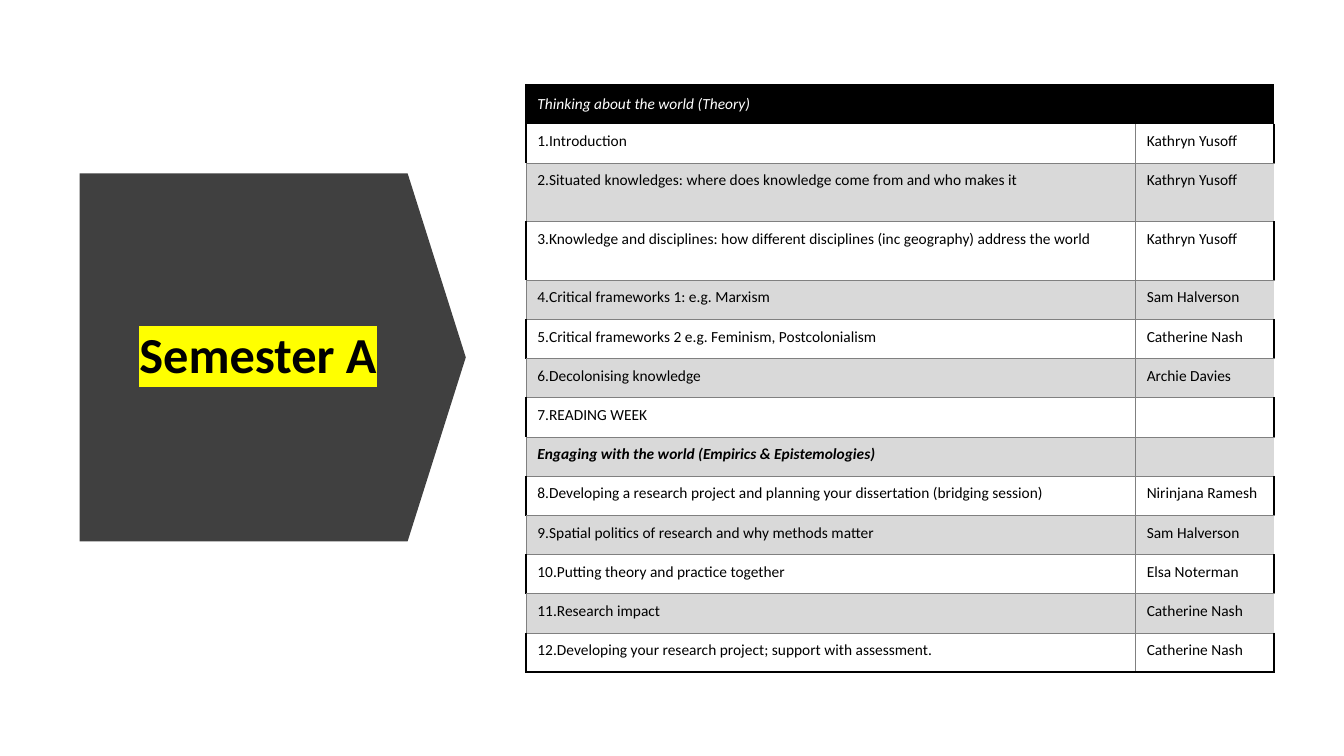
from dataclasses import dataclass
from typing import Optional

from lxml import etree
from pptx import Presentation
from pptx import util as u
from pptx.dml.color import RGBColor
from pptx.enum import shapes, text
from pptx.oxml import ns


@dataclass(frozen=True)
class Theme:
    font: str = "Calibri"
    black: str = "000000"
    white: str = "FFFFFF"
    arrow: str = "404040"
    band: str = "D9D9D9"
    rule: str = "808080"
    highlight: str = "FFFF00"
    title_size: float = 36
    table_size: float = 11
    thick: float = 1.5
    thin: float = 0.5


@dataclass(frozen=True)
class Box:
    """A place in percent of the slide's width and height."""
    left: float
    top: float
    width: float
    height: float


@dataclass(frozen=True)
class Session:
    topic: str
    lecturer: str = ""
    week: Optional[int] = None
    height: float = 5.19


THEME = Theme()
TALL = 7.74
ARROW = Box(6.6, 21.73, 27.38, 51.07)
TITLE = Box(8.4, 28.67, 21.6, 37.2)
TABLE = Box(39.16, 11.2, 55.62, 77.76)
COLUMNS = (45.34, 10.28)
NO_STYLE = "{2D5ABB26-0587-4C30-8999-92F81FD0307C}"

SESSIONS = [
    Session("Thinking about the world (Theory)"),
    Session("Introduction", "Kathryn Yusoff", 1),
    Session("Situated knowledges: where does knowledge come from and who makes it",
            "Kathryn Yusoff", 2, TALL),
    Session("Knowledge and disciplines: how different disciplines (inc geography) address the world",
            "Kathryn Yusoff", 3, TALL),
    Session("Critical frameworks 1: e.g. Marxism", "Sam Halverson", 4),
    Session("Critical frameworks 2 e.g. Feminism, Postcolonialism", "Catherine Nash", 5),
    Session("Decolonising knowledge", "Archie Davies", 6),
    Session("READING WEEK", week=7),
    Session("Engaging with the world (Empirics & Epistemologies)"),
    Session("Developing a research project and planning your dissertation (bridging session)",
            "Nirinjana Ramesh", 8),
    Session("Spatial politics of research and why methods matter", "Sam Halverson", 9),
    Session("Putting theory and practice together", "Elsa Noterman", 10),
    Session("Research impact", "Catherine Nash", 11),
    Session("Developing your research project; support with assessment.", "Catherine Nash", 12),
]

prs = Presentation()
prs.slide_width, prs.slide_height = u.Inches(13.33), u.Inches(7.5)


def across(percent: float) -> int:
    return round(prs.slide_width * percent / 100)


def down(percent: float) -> int:
    return round(prs.slide_height * percent / 100)


def place(box: Box) -> tuple[int, int, int, int]:
    return across(box.left), down(box.top), across(box.width), down(box.height)


def style_run(r, size: float, color: str, bold: bool = False, italic: bool = False) -> None:
    r.font.name, r.font.size = THEME.font, u.Pt(size)
    r.font.bold, r.font.italic = bold, italic
    r.font.color.rgb = RGBColor.from_string(color)


def add_child(parent, tag: str, **attributes: str):
    return etree.SubElement(parent, ns.qn(tag), attributes)


def edges(row: int, col: int) -> dict[str, bool]:
    """Map each ruled side of a cell (L, R, T, B) to whether its line is thick."""
    if row == 0:
        return {"L": True, "T": True} if col == 0 else {"T": True}
    if row % 2 == 0:
        return {"L": False, "R": False, "T": False} if col == 0 else {"L": False, "T": False}
    return {"L": col == 0, "R": col == 1, "B": row == len(SESSIONS) - 1}


def draw_edges(cell, sides: dict[str, bool]) -> None:
    tc_pr = cell._tc.get_or_add_tcPr()
    for side, thick in sides.items():
        width = THEME.thick if thick else THEME.thin
        ln = add_child(tc_pr, f"a:ln{side}", w=str(u.Pt(width)))
        fill = add_child(ln, "a:solidFill")
        add_child(fill, "a:srgbClr", val=THEME.black if thick else THEME.rule)


def fill_cell(cell, row: int, col: int) -> None:
    session = SESSIONS[row]
    draw_edges(cell, edges(row, col))
    if row % 2:
        cell.fill.background()
    else:
        cell.fill.solid()
        cell.fill.fore_color.rgb = RGBColor.from_string(THEME.band if row else THEME.black)
    cell.margin_left, cell.margin_right = u.Inches(0.11), 0
    cell.margin_top = cell.margin_bottom = u.Inches(0.08)
    cell.vertical_anchor = text.MSO_ANCHOR.TOP if row else text.MSO_ANCHOR.MIDDLE

    p = cell.text_frame.paragraphs[0]
    p.text = session.lecturer if col else session.topic
    heading = session.week is None
    for r in p.runs:
        style_run(r, THEME.table_size, THEME.black if row else THEME.white,
                  bold=heading and row > 0, italic=heading)
    if not p.runs:
        add_child(p._p, "a:endParaRPr", sz=str(round(THEME.table_size * 100)))
    if col == 0 and not heading:
        p_pr = p._p.get_or_add_pPr()
        p_pr.set("marL", "0")
        p_pr.set("indent", "0")
        add_child(p_pr, "a:buFont", typeface="+mj-lt")
        add_child(p_pr, "a:buAutoNum", type="arabicPeriod", startAt=str(session.week))


def add_title(s) -> None:
    sp = s.shapes.title
    sp.left, sp.top, sp.width, sp.height = place(TITLE)
    tf = sp.text_frame
    tf.text = "Semester A"
    tf.word_wrap, tf.auto_size = True, text.MSO_AUTO_SIZE.NONE
    tf.vertical_anchor = text.MSO_ANCHOR.MIDDLE
    p = tf.paragraphs[0]
    p.alignment, p.line_spacing, p.space_after = text.PP_ALIGN.CENTER, 0.9, u.Pt(6)
    r = p.runs[0]
    style_run(r, THEME.title_size, THEME.black, bold=True)
    highlight = etree.Element(ns.qn("a:highlight"))
    add_child(highlight, "a:srgbClr", val=THEME.highlight)
    r._r.rPr.find(ns.qn("a:solidFill")).addnext(highlight)


def add_arrow(s) -> None:
    """Draw the block arrow behind the title."""
    sp = s.shapes.add_shape(shapes.MSO_SHAPE.DOWN_ARROW, *place(ARROW))
    sp.rotation = 270
    sp.adjustments[0], sp.adjustments[1] = 1, 0.158
    sp.shadow.inherit = False
    sp.fill.solid()
    sp.fill.fore_color.rgb = RGBColor.from_string(THEME.arrow)
    sp.line.fill.background()
    s.shapes.title.element.addprevious(sp.element)


def add_schedule(s) -> None:
    frame = s.shapes.add_table(len(SESSIONS), len(COLUMNS), *place(TABLE))
    table = frame.table
    table.first_row = table.horz_banding = False
    table._tbl.tblPr.find(ns.qn("a:tableStyleId")).text = NO_STYLE
    for column, width in zip(table.columns, COLUMNS):
        column.width = across(width)
    for row, session in enumerate(SESSIONS):
        table.rows[row].height = down(session.height)
        for col in range(len(COLUMNS)):
            fill_cell(table.cell(row, col), row, col)


def main() -> None:
    s = prs.slides.add_slide(prs.slide_layouts.get_by_name("Title Only"))
    add_title(s)
    add_arrow(s)
    add_schedule(s)
    prs.save("out.pptx")


if __name__ == "__main__":
    main()
